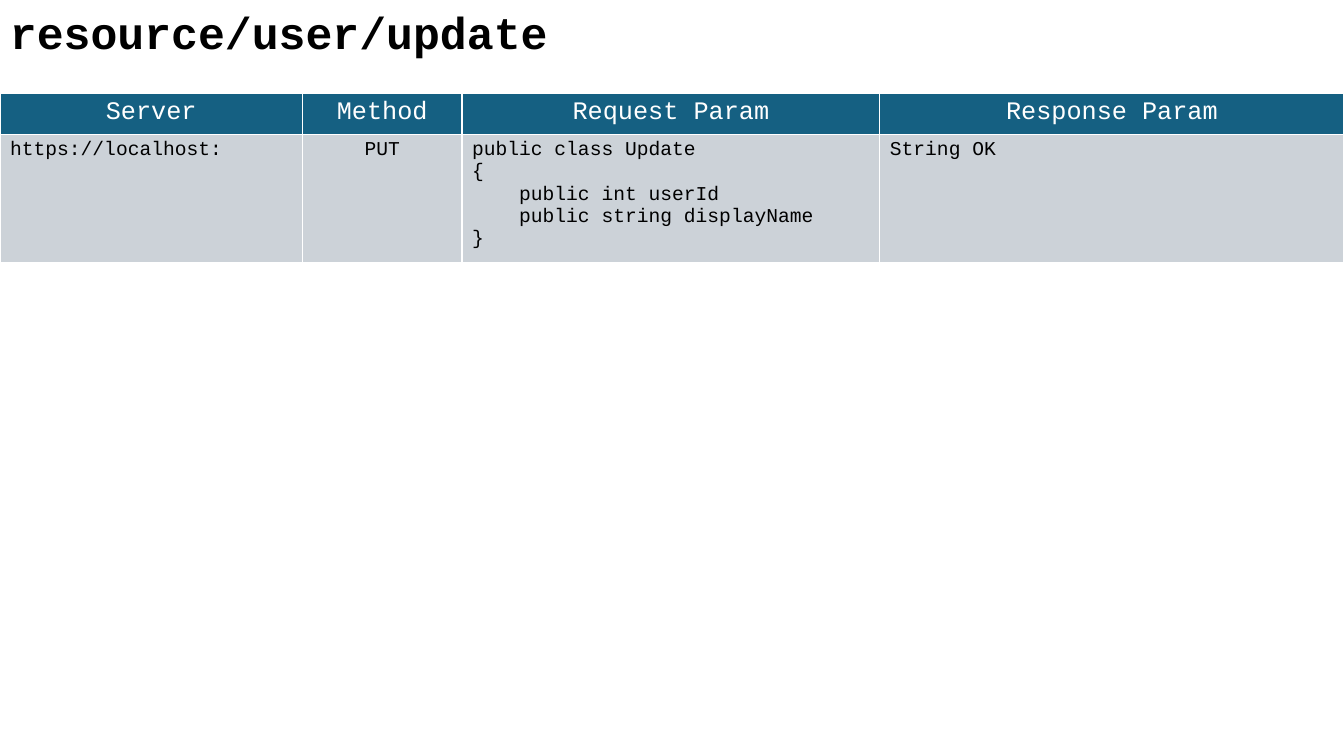
from dataclasses import dataclass

from lxml import etree
from pptx import Presentation
from pptx.dml.color import RGBColor
from pptx.enum.text import MSO_AUTO_SIZE, PP_ALIGN
from pptx.oxml.ns import qn
from pptx.util import Pt

LEFT, CENTER = PP_ALIGN.LEFT, PP_ALIGN.CENTER
FIT_SHAPE = MSO_AUTO_SIZE.SHAPE_TO_FIT_TEXT
PX = 9525


@dataclass(frozen=True)
class Theme:
    """Colours, font and type sizes of the slide."""
    font: str = "Courier New"
    ink: str = "000000"
    paper: str = "FFFFFF"
    header: str = "156082"
    body: str = "CCD2D8"
    title_size: int = 32
    header_size: int = 18
    body_size: int = 14
    border: int = 1


class ApiSlide:
    """Draws the parts of an API reference on one slide."""

    def __init__(self, deck, theme):
        self.theme = theme
        self.slide = deck.slides.add_slide(deck.slide_layouts[6])

    def set_text(self, frame, text, size, color, align=LEFT, bold=False):
        frame.text = text
        for line in frame.paragraphs:
            line.alignment = align
            for run in line.runs:
                run.font.name = self.theme.font
                run.font.size = Pt(size)
                run.font.bold = bold
                run.font.color.rgb = RGBColor.from_string(color)

    def title(self, text, left, top, width, height):
        box = self.slide.shapes.add_textbox(left * PX, top * PX, width * PX, height * PX)
        box.text_frame.word_wrap = True
        box.text_frame.auto_size = FIT_SHAPE
        self.set_text(box.text_frame, text, self.theme.title_size, self.theme.ink, bold=True)

    def outline(self, cell):
        properties = cell._tc.get_or_add_tcPr()
        for side in ("a:lnL", "a:lnR", "a:lnT", "a:lnB"):
            edge = etree.SubElement(properties, qn(side), w=str(Pt(self.theme.border)))
            fill = etree.SubElement(edge, qn("a:solidFill"))
            etree.SubElement(fill, qn("a:srgbClr"), val=self.theme.paper)

    def cell(self, cell, text, size, color, fill, align):
        self.outline(cell)
        cell.fill.solid()
        cell.fill.fore_color.rgb = RGBColor.from_string(fill)
        self.set_text(cell.text_frame, text, size, color, align)

    def endpoint_table(self, columns, left, top, row_heights):
        theme = self.theme
        width = sum(column[0] for column in columns)
        table = self.slide.shapes.add_table(
            len(row_heights), len(columns), left * PX, top * PX,
            width * PX, sum(row_heights) * PX).table
        for row, height in zip(table.rows, row_heights):
            row.height = height * PX
        for index, (column_width, heading, detail, align) in enumerate(columns):
            table.columns[index].width = column_width * PX
            self.cell(table.cell(0, index), heading, theme.header_size,
                      theme.paper, theme.header, CENTER)
            self.cell(table.cell(1, index), detail, theme.body_size,
                      theme.ink, theme.body, align)


def main():
    deck = Presentation()
    deck.slide_width, deck.slide_height = 1280 * PX, 720 * PX
    page = ApiSlide(deck, Theme())
    page.title("resource/user/update", 0, 0, 907, 61)
    request = "\n".join([
        "public class Update",
        "{",
        "    public int userId",
        "    public string displayName",
        "}",
    ])
    page.endpoint_table([
        (288, "Server", "https://localhost:", LEFT),
        (152, "Method", "PUT", CENTER),
        (398, "Request Param", request, LEFT),
        (442, "Response Param", "String OK", LEFT),
    ], 0, 89, (39, 122))
    deck.save("out.pptx")


if __name__ == "__main__":
    main()
